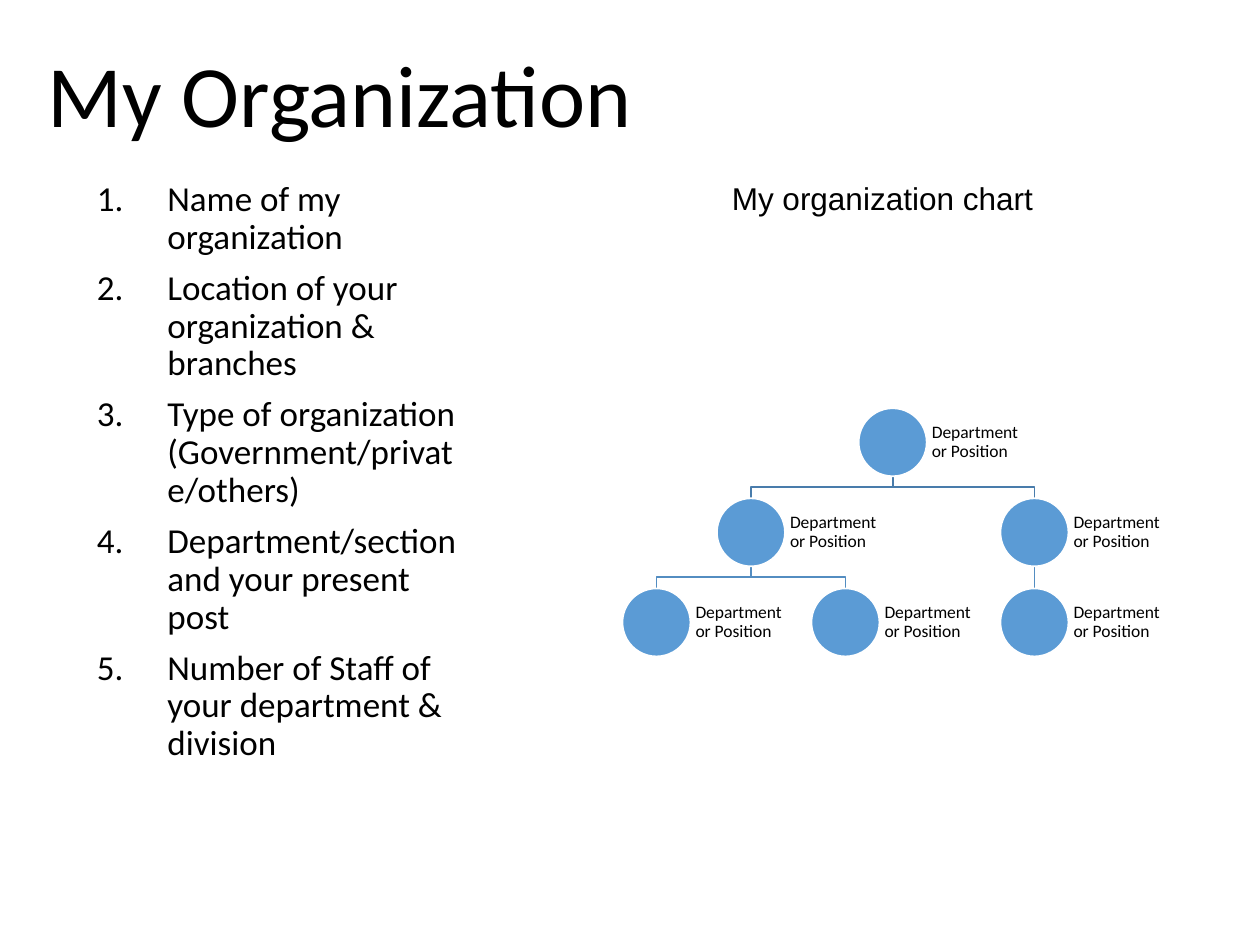
from lxml.etree import SubElement
from pptx import Presentation
from pptx.dml.color import RGBColor
from pptx.enum.shapes import MSO_CONNECTOR, MSO_SHAPE
from pptx.enum.text import MSO_ANCHOR, PP_ALIGN
from pptx.oxml.ns import qn
from pptx.util import Inches, Pt

# Content
TITLE = "My Organization"
TOPICS = [
    "Name of my organization",
    "Location of your organization & branches",
    "Type of organization (Government/private/others)",
    "Department/section and your present post",
    "Number of Staff of your department & division",
]
CHART_HEADING = "My organization chart"
UNIT = "Department or Position"
# Each unit is a label and the units below it
ORGANIZATION = (UNIT, [
    (UNIT, [(UNIT, []), (UNIT, [])]),
    (UNIT, [(UNIT, [])]),
])

THEME = {
    "font": "Calibri", "heading_font": "Arial",
    "text": RGBColor(0, 0, 0), "circle": RGBColor(0x5B, 0x9B, 0xD5),
    "outline": RGBColor(255, 255, 255),
    "links": [RGBColor(0x49, 0x7C, 0xAB), RGBColor(0x53, 0x8D, 0xC1)],
    "title_size": 50, "topic_size": 20, "heading_size": 18, "unit_size": 10,
}

# Chart grid in inches
FIRST_LEAF, LEAF_PITCH = 5.21, 1.5
CHART_TOP, LEVEL_PITCH = 3.24, 0.715
DIAMETER, LABEL_WIDTH, LABEL_INSET = 0.54, 0.82, 0.04


def write(frame, lines, size, font=THEME["font"], spacing=0.9):
    frame.text = "\n".join(lines)
    for para in frame.paragraphs:
        para.alignment = PP_ALIGN.LEFT
        para.line_spacing = spacing
        for span in para.runs:
            span.font.name = font
            span.font.size = Pt(size)
            span.font.color.rgb = THEME["text"]


def add_text(slide, left, top, width, height, lines, size, **style):
    box = slide.shapes.add_textbox(*map(Inches, (left, top, width, height)))
    box.text_frame.word_wrap = True
    write(box.text_frame, lines, size, **style)
    return box.text_frame


def number(para):
    properties = para._p.get_or_add_pPr()
    properties.set("marL", str(Inches(0.56)))
    properties.set("indent", str(-Inches(0.56)))
    SubElement(properties, qn("a:buFont"), typeface="+mj-lt")
    SubElement(properties, qn("a:buAutoNum"), type="arabicPeriod")


def place(unit, level=0, leaves=None):
    """Give leaves equal gaps and centre each parent over its children."""
    leaves = [] if leaves is None else leaves
    label, below = unit
    children = [place(child, level + 1, leaves) for child in below]
    if children:
        center = (children[0]["center"] + children[-1]["center"]) / 2
    else:
        center = FIRST_LEAF + LEAF_PITCH * len(leaves)
        leaves.append(center)
    return {"label": label, "level": level, "center": center,
            "top": CHART_TOP + LEVEL_PITCH * level, "children": children}


def draw_links(slide, unit):
    start = unit["top"] + DIAMETER
    for child in unit["children"]:
        draw_links(slide, child)
        x, end = unit["center"], child["top"]
        if child["center"] == x:
            link = slide.shapes.add_connector(
                MSO_CONNECTOR.STRAIGHT, *map(Inches, (x, start, x, end)))
            SubElement(link._element.spPr, qn("a:effectLst"))
        else:
            bend = (start + end) / 2
            corners = [(x, bend), (child["center"], bend), (child["center"], end)]
            builder = slide.shapes.build_freeform(Inches(x), Inches(start))
            builder.add_line_segments(
                [(Inches(a), Inches(b)) for a, b in corners], close=False)
            link = builder.convert_to_shape()
            link.fill.background()
            link.shadow.inherit = False
        link.line.color.rgb = THEME["links"][unit["level"]]
        link.line.width = Pt(1)


def draw_units(slide, unit):
    left, top = unit["center"] - DIAMETER / 2, unit["top"]
    circle = slide.shapes.add_shape(
        MSO_SHAPE.OVAL, *map(Inches, (left, top, DIAMETER, DIAMETER)))
    circle.shadow.inherit = False
    circle.fill.solid()
    circle.fill.fore_color.rgb = THEME["circle"]
    circle.line.color.rgb = THEME["outline"]
    circle.line.width = Pt(1)
    frame = add_text(slide, left + DIAMETER, top, LABEL_WIDTH, DIAMETER,
                     [unit["label"]], THEME["unit_size"])
    frame.vertical_anchor = MSO_ANCHOR.MIDDLE
    frame.margin_left = frame.margin_right = Inches(LABEL_INSET)
    frame.margin_top = frame.margin_bottom = Inches(LABEL_INSET)
    for child in unit["children"]:
        draw_units(slide, child)


def main():
    deck = Presentation()
    deck.slide_width, deck.slide_height = Inches(10), Inches(7.5)
    slide = deck.slides.add_slide(deck.slide_layouts[5])

    # Title
    title = slide.shapes.title
    title.left, title.top = Inches(0.28), Inches(0.29)
    title.width, title.height = Inches(8.77), Inches(1)
    title.text_frame.vertical_anchor = MSO_ANCHOR.MIDDLE
    write(title.text_frame, [TITLE], THEME["title_size"])

    # Numbered topics
    topics = add_text(slide, 0.67, 1.39, 3.15, 5.28, TOPICS, THEME["topic_size"])
    for index, para in enumerate(topics.paragraphs):
        para.space_before = Pt(7.5 if index else 0)
        number(para)

    # Organization chart
    heading = add_text(slide, 5.71, 1.37, 2.68, 0.4, [CHART_HEADING],
                       THEME["heading_size"], font=THEME["heading_font"], spacing=1)
    heading.word_wrap = False
    root = place(ORGANIZATION)
    draw_links(slide, root)
    draw_units(slide, root)

    deck.save("out.pptx")


if __name__ == "__main__":
    main()
